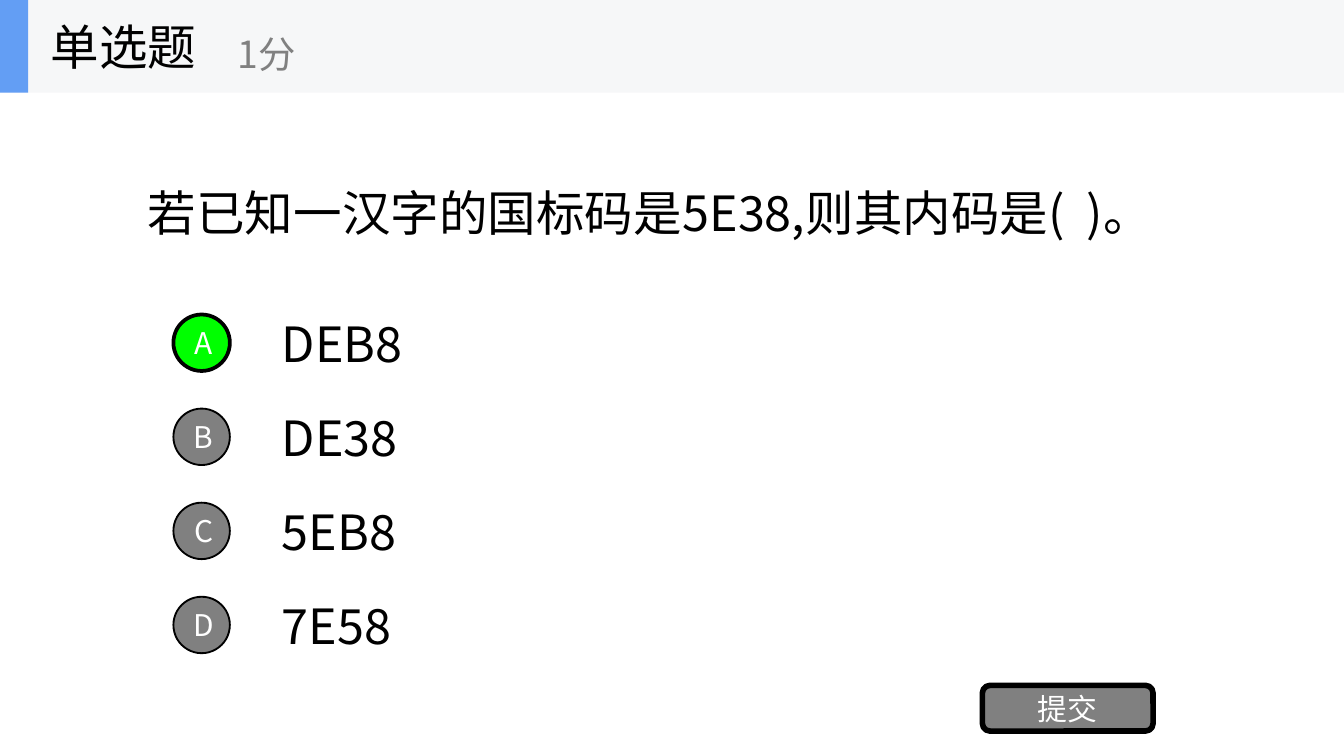
import pptx
import pptx.util
import pptx.dml.color
import pptx.enum.shapes
import pptx.enum.text
import pptx.oxml.ns
import lxml.etree

Inches = pptx.util.Inches
RGBColor = pptx.dml.color.RGBColor
SHAPE = pptx.enum.shapes.MSO_SHAPE
ALIGN = pptx.enum.text.PP_ALIGN

FONT = "Noto Sans CJK SC"
BLACK = RGBColor(0x00, 0x00, 0x00)
WHITE = RGBColor(0xFF, 0xFF, 0xFF)
GRAY = RGBColor(0x80, 0x80, 0x80)
GREEN = RGBColor(0x00, 0xFF, 0x00)
BLUE = RGBColor(0x63, 0x9E, 0xF4)
PALE = RGBColor(0xF6, 0xF7, 0xF8)


def write(box, text, size, color, align=ALIGN.LEFT, wrap=True):
    frame = box.text_frame
    frame.text = text
    frame.word_wrap = wrap
    frame.auto_size = pptx.enum.text.MSO_AUTO_SIZE.NONE
    frame.vertical_anchor = pptx.enum.text.MSO_ANCHOR.MIDDLE
    para = frame.paragraphs[0]
    para.alignment = align
    para.font.size = pptx.util.Pt(size)
    para.font.color.rgb = color
    para.font.name = FONT
    # Chinese characters take the East Asian typeface of each run
    for span in para.runs:
        props = span.font._element
        lxml.etree.SubElement(props, pptx.oxml.ns.qn("a:ea"), typeface=FONT)


def add_filled(kind, left, top, width, height, fill, line_width=0):
    shape = page.shapes.add_shape(
        kind, Inches(left), Inches(top), Inches(width), Inches(height))
    shape.shadow.inherit = False
    shape.fill.solid()
    shape.fill.fore_color.rgb = fill
    if line_width:
        shape.line.color.rgb = BLACK
        shape.line.width = pptx.util.Pt(line_width)
    else:
        shape.line.fill.background()
    frame = shape.text_frame
    frame.margin_left = frame.margin_right = 0
    frame.margin_top = frame.margin_bottom = 0
    return shape


# A 16:9 page
deck = pptx.Presentation()
deck.slide_width = Inches(10)
deck.slide_height = deck.slide_width * 9 // 16
page = deck.slides.add_slide(deck.slide_layouts.get_by_name("Title Only"))

# Question
question = page.shapes.title
question.left, question.top = Inches(1), Inches(1.31)
question.width, question.height = Inches(7.82), Inches(0.53)
write(question, "若已知一汉字的国标码是5E38,则其内码是(  )。", 26, BLACK)

# Answer options, the correct one in green
options = [("A", "DEB8"), ("B", "DE38"), ("C", "5EB8"), ("D", "7E58")]
for row, (letter, answer) in enumerate(options):
    top = 2.29 + row * 0.7
    answer_box = page.shapes.add_textbox(
        Inches(2), Inches(top), Inches(1.2), Inches(0.53))
    write(answer_box, answer, 26, BLACK)
    correct = letter == "A"
    badge = add_filled(SHAPE.OVAL, 1.29, top + 0.05, 0.42, 0.42,
                       GREEN if correct else GRAY, 2 if correct else 1)
    badge.text_frame.margin_left = Inches(0.03)
    write(badge, letter, 16, WHITE, ALIGN.CENTER)

# Submit button
button = add_filled(SHAPE.ROUNDED_RECTANGLE, 7.31, 5.1, 1.27, 0.34, GRAY, 3)
write(button, "提交", 16, WHITE, ALIGN.CENTER)

# Header band with question type and score
add_filled(SHAPE.RECTANGLE, 0, 0, 10, 0.69, PALE)
add_filled(SHAPE.RECTANGLE, 0, 0, 0.21, 0.69, BLUE)
type_box = page.shapes.add_textbox(
    Inches(0.28), Inches(0), Inches(2.08), Inches(0.69))
write(type_box, "单选题", 26, BLACK, wrap=False)
score_box = page.shapes.add_textbox(
    Inches(1.67), Inches(0.12), Inches(2.5), Inches(0.56))
write(score_box, "1分", 20, GRAY, wrap=False)

deck.save("out.pptx")
